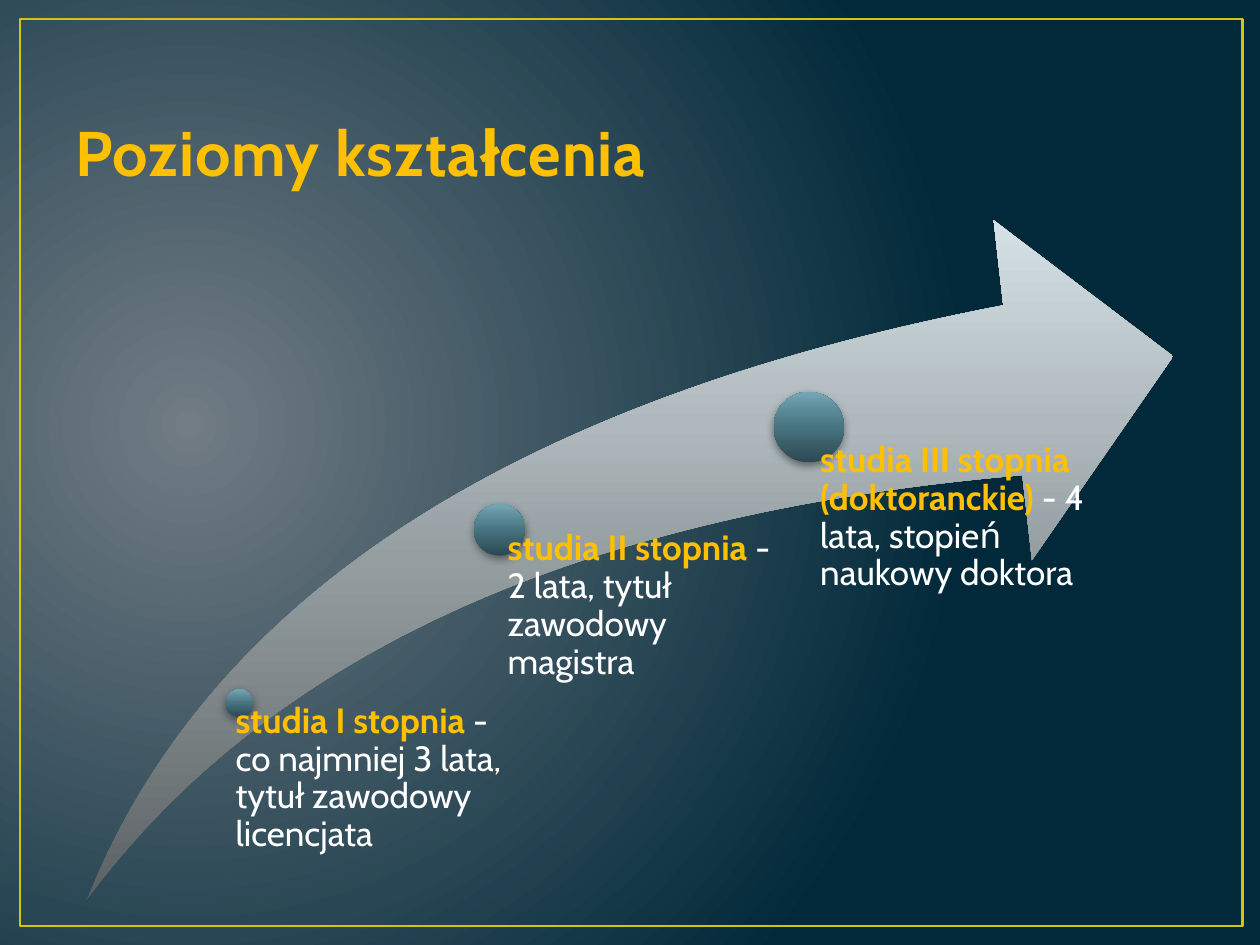
from lxml.etree import SubElement
from pptx import Presentation
from pptx.dml.color import RGBColor as RGB
from pptx.enum.shapes import MSO_SHAPE as SHAPE
from pptx.enum.text import MSO_ANCHOR as ANCHOR
from pptx.oxml.ns import qn
from pptx.util import Inches, Pt

COLORS = {
    "frame": "CFC60D", "accent": "FFC000", "body": "FFFFFF", "shadow": "000000",
    "backdrop": [(0, "717C84"), (100, "01293A")],
    "arrow": [(0, "5C6264"), (50, "949EA1"), (70, "AFB9BD"), (100, "D5E1E5")],
    "marker": [(0, "2B4851"), (50, "477380"), (70, "588794"), (100, "74A7B6")],
}
FONT = "Cabin"

prs = Presentation()
prs.slide_width, prs.slide_height = Inches(10), Inches(7.5)
slide = prs.slides.add_slide(prs.slide_layouts[6])
shapes = slide.shapes


def box(left, top, width, height):
    """Turn shares of the slide, in percent, into a position and size."""
    w, h = prs.slide_width / 100, prs.slide_height / 100
    return int(left * w), int(top * h), int(width * w), int(height * h)


def gradient(fill, owner, stops):
    """Give the fill these colour stops, rising from bottom to top."""
    fill.gradient()
    grad = owner.find(".//" + qn("a:gradFill"))
    for child in list(grad):
        grad.remove(child)
    stop_list = SubElement(grad, qn("a:gsLst"))
    for percent, color in stops:
        stop = SubElement(stop_list, qn("a:gs"), pos=str(percent * 1000))
        SubElement(stop, qn("a:srgbClr"), val=color)
    SubElement(grad, qn("a:lin"), ang=str(270 * 60000), scaled="0")
    return grad


# Backdrop: a round glow from the left
glow = gradient(slide.background.fill, slide.element, COLORS["backdrop"])
glow.remove(glow.find(qn("a:lin")))
circle = SubElement(glow, qn("a:path"), path="circle")
SubElement(circle, qn("a:fillToRect"), l="15000", t="50000", r="85000", b="60000")

# Frame
frame = shapes.add_shape(SHAPE.RECTANGLE, *box(1.6, 2, 97, 96))
frame.shadow.inherit = False
frame.fill.background()
frame.line.color.rgb = RGB.from_string(COLORS["frame"])
frame.line.width = Pt(1.5)

# Title
title = shapes.add_textbox(*box(5, 4, 90, 16.67)).text_frame
title.word_wrap = True
title.vertical_anchor = ANCHOR.BOTTOM
heading = title.paragraphs[0]
heading_run = heading.add_run()
heading_run.text = "Poziomy kształcenia"
heading_run.font._element.set("spc", "50")
heading.font.name, heading.font.size, heading.font.bold = FONT, Pt(36), True
heading.font.color.rgb = RGB.from_string(COLORS["accent"])

# Rising arrow
arrow = shapes.add_shape(SHAPE.SWOOSH_ARROW, *box(6.9, 23.33, 86.2, 71.87))
arrow.adjustments[0] = arrow.adjustments[1] = 0.25
arrow.shadow.inherit = False
arrow.line.fill.background()
gradient(arrow.fill, arrow._element, COLORS["arrow"])

# Levels: marker (left, top, diameter in inches), label box, inset, two texts
levels = [
    ((17.9, 72.93, 0.22), (17.5, 74.4, 23.1, 20.8), 0.12,
     "studia I stopnia ", "- co najmniej 3 lata, tytuł zawodowy licencjata"),
    ((37.6, 53.33, 0.41), (38.2, 56.13, 23.6, 39.07), 0.21,
     "studia II stopnia ", "- 2 lata, tytuł zawodowy magistra"),
    ((61.4, 41.47, 0.56), (62.1, 46.8, 24.9, 46.67), 0.3,
     "studia III stopnia (doktoranckie)", " - 4 lata, stopień naukowy doktora"),
]
for (left, top, diameter), label_box, inset, degree, details in levels:
    marker = shapes.add_shape(
        SHAPE.OVAL, *box(left, top, diameter * 10, diameter / 7.5 * 100))
    marker.line.fill.background()
    gradient(marker.fill, marker._element, COLORS["marker"])
    marker.shadow.inherit = False
    effects = marker._element.spPr.find(qn("a:effectLst"))
    shadow = SubElement(effects, qn("a:outerShdw"), blurRad=str(Pt(5)),
                        dist=str(Pt(2)), dir=str(90 * 60000), rotWithShape="0")
    shade = SubElement(shadow, qn("a:srgbClr"), val=COLORS["shadow"])
    SubElement(shade, qn("a:alpha"), val="43000")

    label = shapes.add_textbox(*box(*label_box)).text_frame
    label.word_wrap = True
    label.margin_left = Inches(inset)
    label.margin_top = label.margin_right = label.margin_bottom = 0
    sentence = label.paragraphs[0]
    sentence.line_spacing = 0.9
    sentence.font.name, sentence.font.size = FONT, Pt(20)
    for words, color, bold in ((degree, "accent", True), (details, "body", False)):
        run = sentence.add_run()
        run.text = words
        run.font.bold = bold
        run.font.color.rgb = RGB.from_string(COLORS[color])

prs.save("out.pptx")
